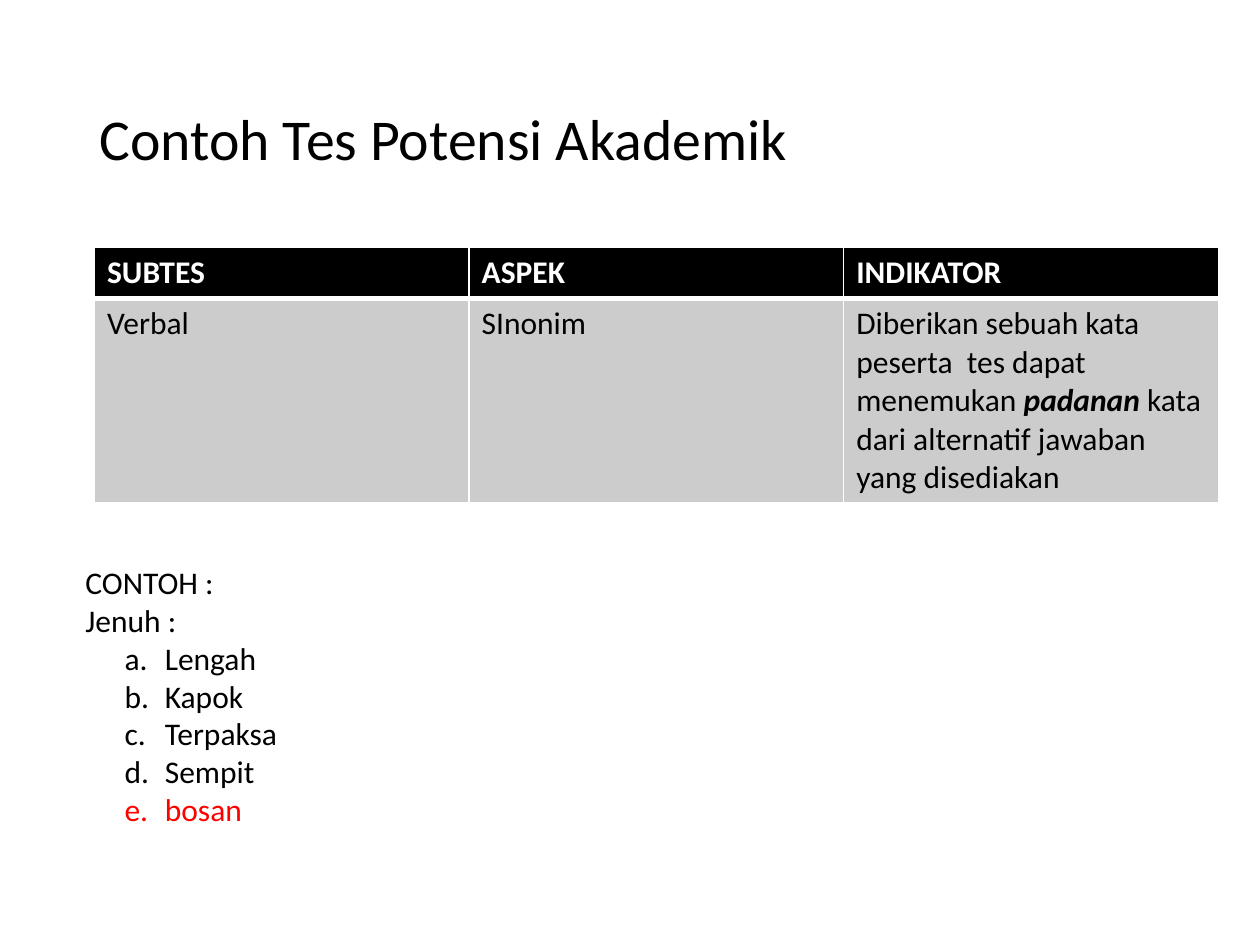
import pptx
import pptx.dml.color
import pptx.enum.text
import pptx.oxml
import pptx.oxml.ns
import pptx.util
from lxml import etree
from pptx.util import Inches

FONT = "Calibri"
COLORS = {"text": "000000", "header": "000000", "body": "CCCCCC",
          "light": "FFFFFF", "answer": "FF0000"}
HEADERS = ["SUBTES", "ASPEK", "INDIKATOR"]
BODY = [
    [("Verbal", False)],
    [("SInonim", False)],
    [("Diberikan sebuah kata peserta  tes dapat menemukan ", False),
     ("padanan ", True),
     ("kata dari alternatif jawaban yang disediakan", False)],
]
PROMPTS = ["CONTOH :", "Jenuh :"]
OPTIONS = ["Lengah", "Kapok", "Terpaksa", "Sempit", "bosan"]
CORRECT = "bosan"


def rgb(name):
    return pptx.dml.color.RGBColor.from_string(COLORS[name])


def set_font(font, size, color):
    font.name = FONT
    font.size = pptx.util.Pt(size)
    font.color.rgb = rgb(color)


def add_text_frame(slide, left, top, width, height):
    shape = slide.shapes.add_textbox(Inches(left), Inches(top), Inches(width), Inches(height))
    shape.text_frame.word_wrap = True
    return shape.text_frame


def add_title(slide, left, top, width, height):
    frame = add_text_frame(slide, left, top, width, height)
    frame.vertical_anchor = pptx.enum.text.MSO_ANCHOR.MIDDLE
    paragraph = frame.paragraphs[0]
    paragraph.text = "Contoh Tes Potensi Akademik"
    paragraph.line_spacing = 0.9
    set_font(paragraph.font, 33, "text")


def style_cell(cell, fill, bottom_width, top_width):
    cell.fill.solid()
    cell.fill.fore_color.rgb = rgb(fill)
    properties = cell._tc.get_or_add_tcPr()
    borders = [("lnL", 1), ("lnR", 1), ("lnT", top_width), ("lnB", bottom_width)]
    for index, (tag, width) in enumerate(borders):
        line = etree.Element(pptx.oxml.ns.qn(f"a:{tag}"), w=str(pptx.util.Pt(width)))
        solid = etree.SubElement(line, pptx.oxml.ns.qn("a:solidFill"))
        etree.SubElement(solid, pptx.oxml.ns.qn("a:srgbClr"), val=COLORS["light"])
        properties.insert(index, line)


def add_indicator_table(slide, left, top, width, row_heights):
    table = slide.shapes.add_table(
        len(row_heights), len(HEADERS), Inches(left), Inches(top),
        Inches(width), Inches(sum(row_heights))).table
    for row, height in zip(table.rows, row_heights):
        row.height = Inches(height)
    for column, (header, runs) in enumerate(zip(HEADERS, BODY)):
        table.columns[column].width = Inches(width / len(HEADERS))
        header_cell, body_cell = table.cell(0, column), table.cell(1, column)
        style_cell(header_cell, "header", 3, 1)
        style_cell(body_cell, "body", 1, 3)

        paragraph = header_cell.text_frame.paragraphs[0]
        paragraph.text = header
        set_font(paragraph.font, 18, "light")
        paragraph.font.bold = True

        paragraph = body_cell.text_frame.paragraphs[0]
        set_font(paragraph.font, 18, "text")
        for text, emphasized in runs:
            run = paragraph.add_run()
            run.text = text
            run.font.bold = run.font.italic = emphasized


def add_letter(paragraph):
    properties = paragraph._p.get_or_add_pPr()
    properties.set("marL", str(Inches(0.63)))
    properties.set("indent", str(Inches(-0.32)))
    etree.SubElement(properties, pptx.oxml.ns.qn("a:buFont"), typeface="+mj-lt")
    etree.SubElement(properties, pptx.oxml.ns.qn("a:buAutoNum"), type="alphaLcPeriod")


def add_question(slide, left, top, width, height):
    frame = add_text_frame(slide, left, top, width, height)
    for index, text in enumerate(PROMPTS + OPTIONS):
        paragraph = frame.add_paragraph() if index else frame.paragraphs[0]
        paragraph.text = text
        if text in OPTIONS:
            add_letter(paragraph)
        set_font(paragraph.font, 18, "answer" if text == CORRECT else "text")


def main():
    presentation = pptx.Presentation()
    presentation.slide_width = Inches(10)
    presentation.slide_height = Inches(7.5)
    slide = presentation.slides.add_slide(presentation.slide_layouts[6])
    add_title(slide, 0.69, 0.4, 8.62, 1.45)
    add_indicator_table(slide, 0.75, 1.96, 8.92, [0.41, 1.62])
    add_question(slide, 0.58, 4.42, 8.75, 2.52)
    presentation.save("out.pptx")


if __name__ == "__main__":
    main()
